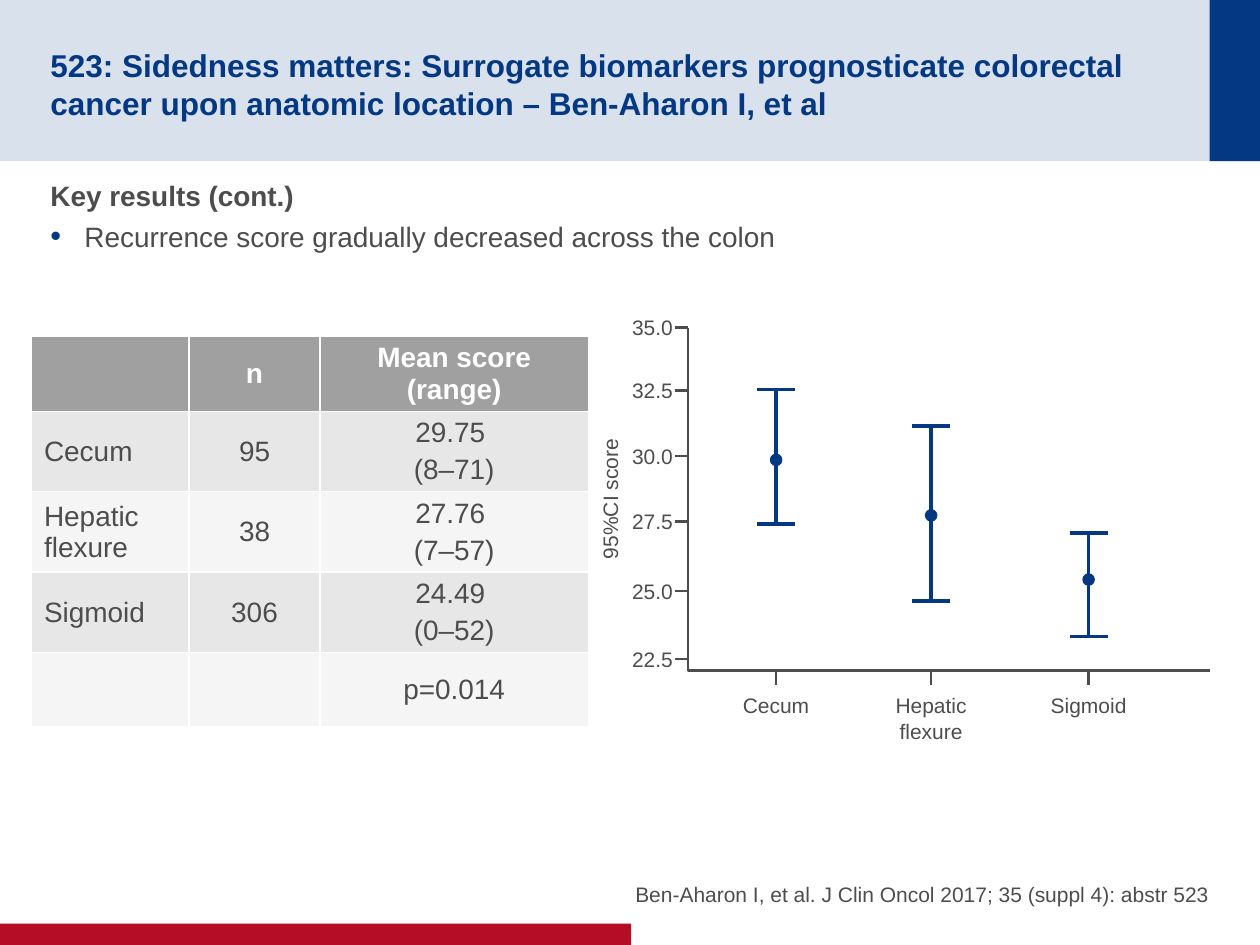
from lxml import etree
from pptx import Presentation
from pptx.dml.color import RGBColor
from pptx.enum.shapes import MSO_CONNECTOR, MSO_SHAPE
from pptx.enum.text import MSO_ANCHOR, MSO_AUTO_SIZE, PP_ALIGN
from pptx.oxml.ns import qn
from pptx.util import Inches, Pt

LEFT, CENTER, RIGHT = PP_ALIGN.LEFT, PP_ALIGN.CENTER, PP_ALIGN.RIGHT
TOP, MIDDLE, BOTTOM = MSO_ANCHOR.TOP, MSO_ANCHOR.MIDDLE, MSO_ANCHOR.BOTTOM
RECT, OVAL = MSO_SHAPE.RECTANGLE, MSO_SHAPE.OVAL
STRAIGHT = MSO_CONNECTOR.STRAIGHT
NO_FIT, GROW = MSO_AUTO_SIZE.NONE, MSO_AUTO_SIZE.SHAPE_TO_FIT_TEXT

NAVY = RGBColor(0x04, 0x38, 0x82)
RED = RGBColor(0xB6, 0x0D, 0x27)
TEXT = RGBColor(0x4D, 0x4D, 0x4D)
GREY = RGBColor(0xA0, 0xA0, 0xA0)
WHITE = RGBColor(0xFF, 0xFF, 0xFF)

TITLE = ("523: Sidedness matters: Surrogate biomarkers prognosticate colorectal "
         "cancer upon anatomic location – Ben-Aharon I, et al")
HEAD = "Key results (cont.)"
POINT = "Recurrence score gradually decreased across the colon"
SOURCE = "Ben-Aharon I, et al. J Clin Oncol 2017; 35 (suppl 4): abstr 523"

BANDS = [((0, 0, 10, 1.28), NAVY, 15),
         ((9.6, 0, 0.4, 1.28), NAVY, 100),
         ((0, 7.33, 5.01, 0.17), RED, 100)]

COLS = [1.25, 1.04, 2.13]
ROWS = [["", "n", "Mean score (range)"],
        ["Cecum", "95", "29.75 \n(8–71)"],
        ["Hepatic flexure", "38", "27.76 \n(7–57)"],
        ["Sigmoid", "306", "24.49 \n(0–52)"],
        ["", "", "p=0.014"]]
ROW_H = 0.59

AXIS_X, AXIS_Y, AXIS_END = 5.46, 5.32, 9.6
TICKS = [("35.0", 2.6), ("32.5", 3.1), ("30.0", 3.62),
         ("27.5", 4.14), ("25.0", 4.69), ("22.5", 5.23)]
# label, centre, top of interval, mean, bottom of interval
SITES = [("Cecum", 6.16, 3.09, 3.65, 4.16),
         ("Hepatic\nflexure", 7.39, 3.38, 4.09, 4.77),
         ("Sigmoid", 8.64, 4.23, 4.6, 5.05)]
CAP, DOT, TICK = 0.15, 0.1, 0.1


def box(at):
    return [Inches(v) for v in at]


def add(parent, tag, **attrs):
    return etree.SubElement(parent, qn(tag), attrs)


def paint(fill, parent, color, alpha=100):
    fill.solid()
    fill.fore_color.rgb = color
    if alpha < 100:
        clr = parent.find(".//" + qn("a:srgbClr"))
        add(clr, "a:alpha", val=str(alpha * 1000))


def write(par, words, size, color=TEXT, bold=False, align=LEFT, before=0, after=0):
    par.alignment = align
    par.space_before, par.space_after = Pt(before), Pt(after)
    run = par.add_run()
    run.text = words
    font = run.font
    font.name, font.size, font.bold = "Arial", Pt(size), bold
    font.color.rgb = color


def place(holder, at, anchor, pads):
    holder.left, holder.top, holder.width, holder.height = box(at)
    frame = holder.text_frame
    frame.auto_size, frame.word_wrap = NO_FIT, True
    frame.vertical_anchor = anchor
    frame.margin_left = frame.margin_right = 0
    frame.margin_top, frame.margin_bottom = box(pads)
    return frame


def plain(par):
    """Switch off the bullet and indent of the template."""
    ppr = par._p.get_or_add_pPr()
    ppr.set("marL", "0")
    ppr.set("indent", "0")
    add(ppr, "a:buNone")


def dotted(par):
    ppr = par._p.get_or_add_pPr()
    ppr.set("marL", str(Inches(0.27)))
    ppr.set("indent", str(-Inches(0.27)))
    add(add(ppr, "a:buClr"), "a:srgbClr", val=str(NAVY))
    add(ppr, "a:buSzPct", val="110000")
    add(ppr, "a:buFont", typeface="Arial")
    add(ppr, "a:buChar", char="•")


def solid(shapes, kind, at, color, alpha=100):
    shape = shapes.add_shape(kind, *box(at))
    shape.shadow.inherit = False
    shape.line.fill.background()
    paint(shape.fill, shape._element.spPr, color, alpha)
    return shape


def stroke(shapes, x1, y1, x2, y2, color=TEXT, width=1.5):
    line = shapes.add_connector(STRAIGHT, *box((x1, y1, x2, y2)))
    line.line.color.rgb, line.line.width = color, Pt(width)
    add(line._element.spPr, "a:effectLst")


def label(shapes, words, at, align=CENTER, anchor=TOP):
    item = shapes.add_textbox(*box(at))
    frame = item.text_frame
    frame.word_wrap, frame.auto_size = False, GROW
    frame.vertical_anchor = anchor
    for i, part in enumerate(words.split("\n")):
        par = frame.add_paragraph() if i else frame.paragraphs[0]
        write(par, part, 12, align=align)
    return item


def add_text(slide):
    title, body, note = slide.placeholders
    for at, color, alpha in BANDS:
        band = solid(slide.shapes, RECT, at, color, alpha)
        title._element.addprevious(band._element)
    frame = place(title, (0.4, 0.2, 9.01, 0.88), MIDDLE, (0.05, 0))
    write(frame.paragraphs[0], TITLE, 18, NAVY, True)

    frame = place(body, (0.4, 1.37, 9.2, 0.96), TOP, (0.05, 0.05))
    write(frame.paragraphs[0], HEAD, 16, bold=True, after=4)
    plain(frame.paragraphs[0])
    point = frame.add_paragraph()
    write(point, POINT, 16, after=4)
    dotted(point)

    frame = place(note, (4.91, 6.67, 4.69, 0.53), BOTTOM, (0, 0))
    write(frame.paragraphs[0], SOURCE, 12, align=RIGHT, after=4)
    plain(frame.paragraphs[0])


def add_scores(shapes):
    at = (0.25, 2.67, sum(COLS), ROW_H * len(ROWS))
    table = shapes.add_table(len(ROWS), len(COLS), *box(at)).table
    for col, width in zip(table.columns, COLS):
        col.width = Inches(width)
    for r, row in enumerate(ROWS):
        table.rows[r].height = Inches(ROW_H)
        for c, words in enumerate(row):
            cell = table.cell(r, c)
            cell.vertical_anchor = MIDDLE
            props = cell._tc.get_or_add_tcPr()
            if r == 0:
                edge = add(props, "a:lnB", w=str(Pt(1)))
                add(add(edge, "a:solidFill"), "a:srgbClr", val=str(WHITE))
            fill = cell.fill
            fill.solid()
            fill.fore_color.rgb = GREY
            if r:
                clr = props.find(qn("a:solidFill")).find(qn("a:srgbClr"))
                add(clr, "a:alpha", val="25000" if r % 2 else "10000")
            if not words:
                continue
            for i, part in enumerate(words.split("\n")):
                frame = cell.text_frame
                par = frame.add_paragraph() if i else frame.paragraphs[0]
                write(par, part, 16, TEXT if r else WHITE, r == 0,
                      CENTER if c else LEFT, before=3.2)


def add_plot(shapes):
    pen = shapes.build_freeform(Inches(AXIS_X), Inches(TICKS[0][1]))
    pen.add_line_segments([box((AXIS_X, AXIS_Y)), box((AXIS_END, AXIS_Y))], close=False)
    axis = pen.convert_to_shape()
    axis.shadow.inherit = False
    axis.fill.background()
    axis.line.color.rgb, axis.line.width = TEXT, Pt(1.5)

    for words, y in TICKS:
        stroke(shapes, AXIS_X - TICK, y, AXIS_X, y)
        label(shapes, words, (4.91, y - 0.15, 0.53, 0.3), RIGHT, MIDDLE)
    label(shapes, "95%CI score", (4.26, 3.81, 1.16, 0.3)).rotation = 270

    for words, x, high, mean, low in SITES:
        stroke(shapes, x, AXIS_Y, x, AXIS_Y + 0.12)
        height = 0.3 + 0.2 * words.count("\n")
        label(shapes, words, (x - 0.4, 5.45, 0.8, height))
        stroke(shapes, x, high, x, low, NAVY, 2)
        for y in (high, low):
            stroke(shapes, x - CAP, y, x + CAP, y, NAVY, 2)
        solid(shapes, OVAL, (x - DOT / 2, mean - DOT / 2, DOT, DOT), NAVY)


def main():
    deck = Presentation()
    deck.slide_width, deck.slide_height = box((10, 7.5))
    slide = deck.slides.add_slide(deck.slide_layouts[3])
    add_text(slide)
    add_scores(slide.shapes)
    add_plot(slide.shapes)
    deck.save("out.pptx")


if __name__ == "__main__":
    main()
